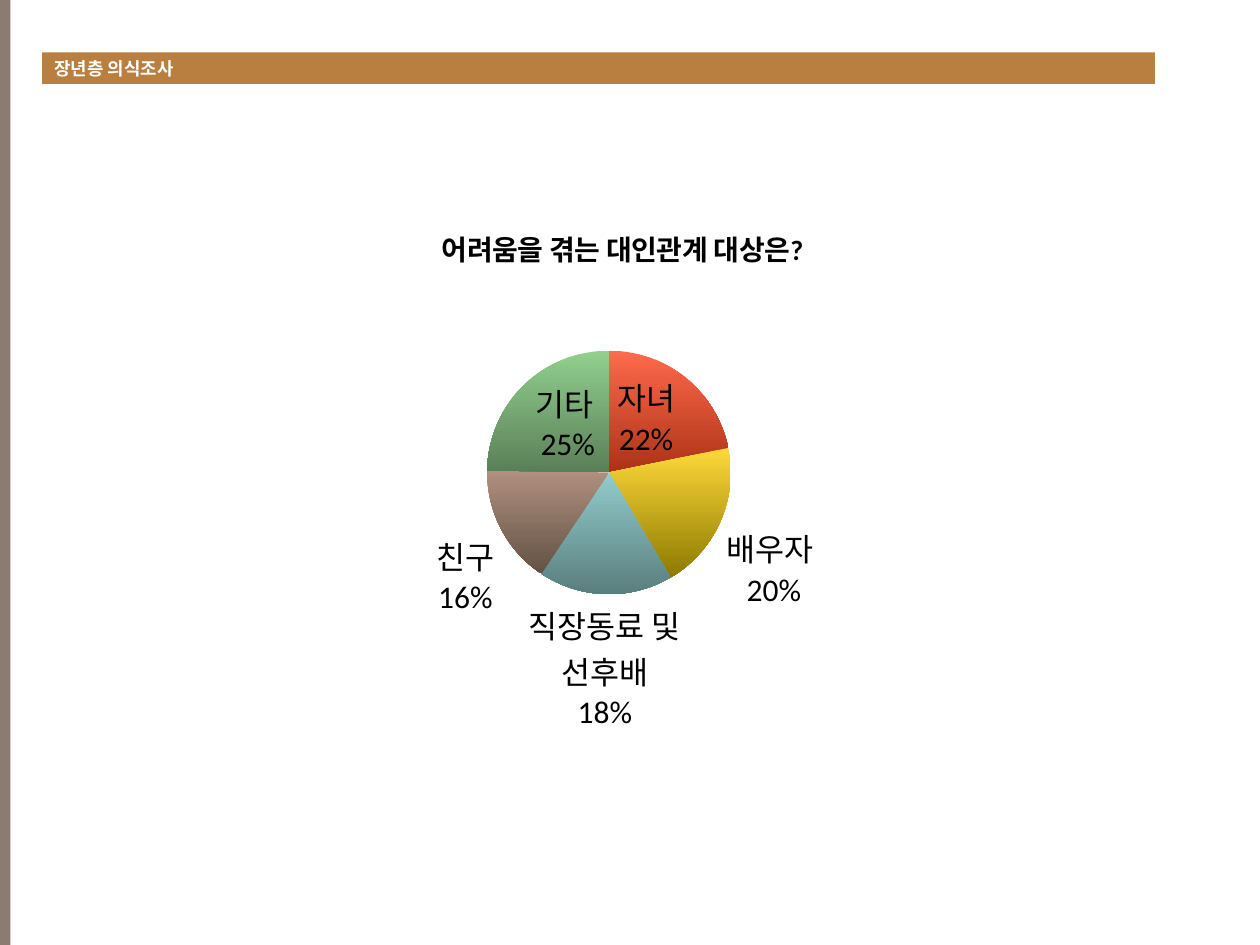
from dataclasses import dataclass

from lxml.etree import SubElement
from pptx import Presentation
from pptx.chart.data import CategoryChartData
from pptx.dml.color import RGBColor
from pptx.enum.chart import XL_CHART_TYPE, XL_LABEL_POSITION
from pptx.enum.shapes import MSO_SHAPE
from pptx.enum.text import MSO_ANCHOR, PP_ALIGN
from pptx.oxml.ns import qn
from pptx.util import Pt


@dataclass(frozen=True)
class Theme:
    font: str = "Calibri"
    side: str = "8C7B70"
    header: str = "B87F40"
    light: str = "FFFFFF"
    dark: str = "000000"
    header_size: float = 10.2
    title_size: float = 16
    label_size: float = 18


THEME = Theme()
QUESTION = "어려움을 겪는 대인관계 대상은? "
ANSWERS = [
    ("자녀", 22, "FF6A4C", "AC3216"),
    ("배우자 ", 20, "FFD83A", "8C7A00"),
    ("직장동료 및 선후배", 18, "92CCCC", "5A7E7E"),
    ("친구", 16, "B09080", "635244"),
    ("기타 ", 25, "92D08E", "5A7F58"),
]


def style_font(font, size, color, bold=False):
    font.name = THEME.font
    font.size = Pt(size)
    font.bold = bold
    font.color.rgb = RGBColor.from_string(color)


def add_bar(s, box, color):
    sp = s.shapes.add_shape(MSO_SHAPE.RECTANGLE, *map(Pt, box))
    sp.shadow.inherit = False
    sp.fill.solid()
    sp.fill.fore_color.rgb = RGBColor.from_string(color)
    sp.line.fill.background()
    return sp


def add_header(s, box, text):
    tf = add_bar(s, box, THEME.header).text_frame
    tf.word_wrap = True
    tf.vertical_anchor = MSO_ANCHOR.MIDDLE
    tf.margin_top = tf.margin_bottom = 0
    p = tf.paragraphs[0]
    p.text = text
    p.alignment = PP_ALIGN.LEFT
    style_font(p.runs[0].font, THEME.header_size, THEME.light, True)


def set_layout(parent, index, **values):
    for old in parent.findall(qn("c:layout")):
        parent.remove(old)
    layout = parent.makeelement(qn("c:layout"))
    parent.insert(index, layout)
    manual = SubElement(layout, qn("c:manualLayout"))
    for name, value in values.items():
        SubElement(manual, qn(f"c:{name}")).set("val", str(value))


def add_pie(s, box, question, answers):
    data = CategoryChartData()
    data.categories = [name for name, *_ in answers]
    data.add_series(question, [value for _, value, *_ in answers])
    chart = s.shapes.add_chart(XL_CHART_TYPE.PIE, *map(Pt, box), data).chart
    style_font(chart.font, THEME.label_size, THEME.dark)
    chart.has_legend = False

    chart.has_title = True
    title = chart.chart_title
    p = title.text_frame.paragraphs[0]
    p.text = question
    style_font(p.runs[0].font, THEME.title_size, THEME.dark, True)
    set_layout(title.element, 1, xMode="edge", yMode="edge", x=0.27, y=0.05)
    area = chart.element.find(f".//{qn('c:plotArea')}")
    set_layout(area, 0, layoutTarget="inner", xMode="edge", yMode="edge",
               x=0.33, y=0.28, w=0.29, h=0.44)

    plot = chart.plots[0]
    plot.vary_by_categories = True
    for i, (_, _, top, bottom) in enumerate(answers):
        fill = plot.series[0].points[i].format.fill
        fill.gradient()
        fill.gradient_angle = 270
        for stop, color in zip(fill.gradient_stops, (top, bottom)):
            stop.color.rgb = RGBColor.from_string(color)

    plot.has_data_labels = True
    labels = plot.data_labels
    labels.show_value = False
    labels.show_category_name = labels.show_percentage = True
    labels.number_format = "0%"
    labels.number_format_is_linked = False
    labels.position = XL_LABEL_POSITION.BEST_FIT
    style_font(labels.font, THEME.label_size, THEME.dark)
    d_lbls = area.find(f".//{qn('c:dLbls')}")
    separator = d_lbls.makeelement(qn("c:separator"))
    separator.text = "\n"
    d_lbls.find(qn("c:showBubbleSize")).addnext(separator)


def main():
    prs = Presentation()
    prs.slide_width, prs.slide_height = Pt(720), Pt(540)
    s = prs.slides.add_slide(prs.slide_layouts[6])
    add_bar(s, (0, 0, 6, 540), THEME.side)
    add_header(s, (24, 30, 636, 18), "장년층 의식조사")
    add_pie(s, (120, 110, 480, 320), QUESTION, ANSWERS)
    prs.save("out.pptx")


if __name__ == "__main__":
    main()
